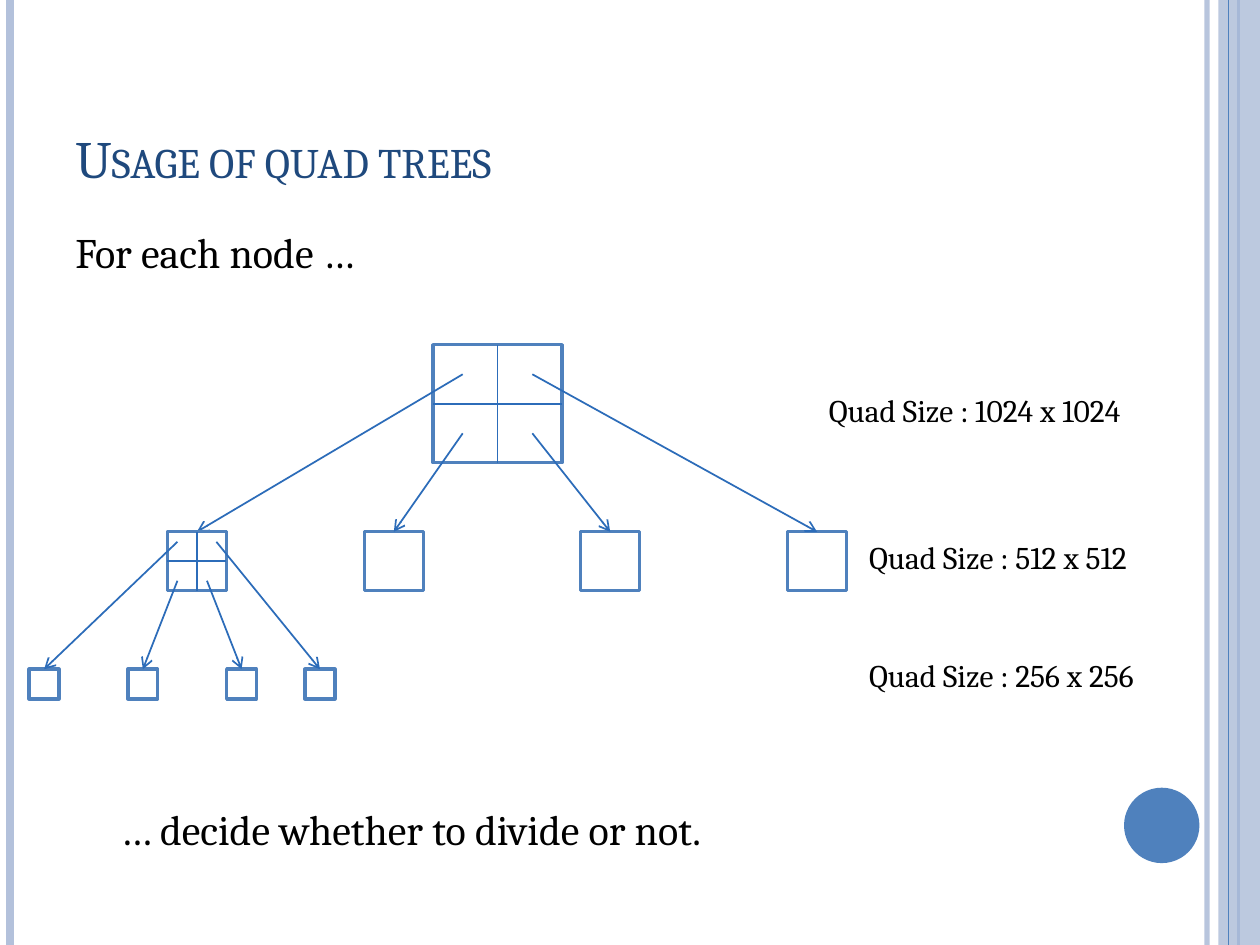
from pptx import Presentation
from pptx.dml.color import RGBColor as RGB
from pptx.enum.shapes import MSO_CONNECTOR as LINK, MSO_SHAPE as SHAPE
from pptx.enum.text import (
    MSO_ANCHOR as ANCHOR, MSO_AUTO_SIZE as FIT, PP_ALIGN as ALIGN)
from pptx.oxml.ns import qn
from pptx.util import Cm, Pt
from lxml.etree import SubElement as Sub

HUES = {
    "title": "1F497D",
    "text": "000000",
    "paper": "FFFFFF",
    "blue": "4F81BD",
    "pale": "B3C1DB",
    "link": "2C6CB9",
}
WIDE, HIGH = 25.4, 19.05


def hue(name):
    return RGB.from_string(HUES[name])


def fade(item, alpha):
    """Set the opacity, in percent, of the first colour in item."""
    tint = next(item.iter(qn("a:srgbClr")))
    Sub(tint, qn("a:alpha")).set("val", str(alpha * 1000))


def write(frame, text, size=18, color="text", font="Cambria", space=0,
          anchor=ANCHOR.TOP, small=False):
    frame.word_wrap = True
    frame.auto_size = FIT.NONE
    frame.vertical_anchor = anchor
    para = frame.paragraphs[0]
    para.alignment = ALIGN.LEFT
    para.space_before = Pt(space)
    run = para.add_run()
    run.text = text
    run.font.name = font
    run.font.size = Pt(size)
    run.font.color.rgb = hue(color)
    if small:
        run.font._element.set("cap", "small")


class Deck:
    """Holds the line style and the current slide; lengths are in cm."""

    def __init__(self, slide, edge=2, thin=1):
        self.shapes = slide.shapes
        self.edge = edge
        self.thin = thin

    def title(self, text, x, y, w, h, **form):
        hold = self.shapes.title
        hold.left, hold.top, hold.width, hold.height = map(Cm, (x, y, w, h))
        write(hold.text_frame, text, **form)

    def text(self, text, x, y, w, h, **form):
        box = self.shapes.add_textbox(Cm(x), Cm(y), Cm(w), Cm(h))
        write(box.text_frame, text, **form)

    def shape(self, kind, x, y, w, h, fill, line=None, alpha=None):
        item = self.shapes.add_shape(kind, Cm(x), Cm(y), Cm(w), Cm(h))
        item.shadow.inherit = False
        item.fill.solid()
        item.fill.fore_color.rgb = hue(fill)
        if alpha:
            fade(item._element.spPr, alpha)
        if line:
            item.line.color.rgb = hue(line)
            item.line.width = Pt(self.edge)
        else:
            item.line.fill.background()

    def line(self, x1, y1, x2, y2, color="link", width=None, head=False,
             alpha=None):
        item = self.shapes.add_connector(
            LINK.STRAIGHT, Cm(x1), Cm(y1), Cm(x2), Cm(y2))
        item.line.color.rgb = hue(color)
        item.line.width = Pt(width or self.thin)
        props = item._element.spPr
        if alpha:
            fade(props, alpha)
        if head:
            Sub(props.find(qn("a:ln")), qn("a:tailEnd")).set("type", "arrow")
        Sub(props, qn("a:effectLst"))

    def quad(self, mid, y, w, h):
        self.shape(SHAPE.RECTANGLE, mid - w / 2, y, w, h, "paper", "blue")

    def split(self, mid, y, w, h, starts, kids, top, side):
        """Divide a quad in four and link each part to a child quad."""
        self.quad(mid, y, w, h)
        self.line(mid - w / 2, y + h / 2, mid + w / 2, y + h / 2)
        self.line(mid, y, mid, y + h)
        for (fx, fy), kid in zip(starts, kids):
            self.quad(kid, top, side, side)
            self.line(mid + (fx - 0.5) * w, y + fy * h, kid, top, head=True)


def frame(deck):
    """Draw the side lines, the right band and the dot."""
    deck.line(24.33, 0, 24.33, HIGH, "pale", 3, alpha=93)
    deck.line(0.2, 0, 0.2, HIGH, "pale", 4.5)
    deck.line(24.97, 0, 24.97, HIGH, "blue", 1.5)
    deck.shape(SHAPE.RECTANGLE, 24.56, 0, WIDE - 24.56, HIGH, "pale", alpha=87)
    deck.line(24.77, 0, 24.77, HIGH, "blue", 0.75)
    deck.shape(SHAPE.OVAL, 22.66, 15.88, 1.52, 1.52, "blue")


def tree(deck):
    root, node, leaf = 10.03, 1.19, 0.6
    row, low = 10.72, 13.49
    kids = (3.97, 7.94, 12.3, 16.47)
    tips = (0.89, 2.88, 4.87, 6.45)
    wide = ((0.23, 0.25), (0.23, 0.75), (0.77, 0.75), (0.77, 0.25))
    tight = ((0.17, 0.17), (0.17, 0.83), (0.67, 0.83), (0.83, 0.17))
    deck.split(root, 6.95, 2.6, 2.38, wide, kids, row, node)
    deck.split(kids[0], row, node, node, tight, tips, low, leaf)


def main():
    prs = Presentation()
    prs.slide_width, prs.slide_height = Cm(WIDE), Cm(HIGH)
    deck = Deck(prs.slides.add_slide(prs.slide_layouts[5]))
    frame(deck)
    deck.title("Usage of quad trees", 1.27, 0.76, 20.75, 3.18, size=30,
               color="title", anchor=ANCHOR.BOTTOM, small=True)
    deck.text("For each node …", 1.27, 4.45, 20.75, 1.5, size=24, space=6)
    deck.text("… decide whether to divide or not.", 2.18, 16.08, 19.56, 1.5,
              size=24, space=6)
    tree(deck)
    for size, x, y, w in ((1024, 16.46, 7.75, 7.75),
                          (512, 17.27, 10.72, 6.91),
                          (256, 17.27, 13.11, 7.14)):
        deck.text(f"Quad Size : {size} x {size}", x, y, w, 1.02)
    prs.save("out.pptx")


if __name__ == "__main__":
    main()
